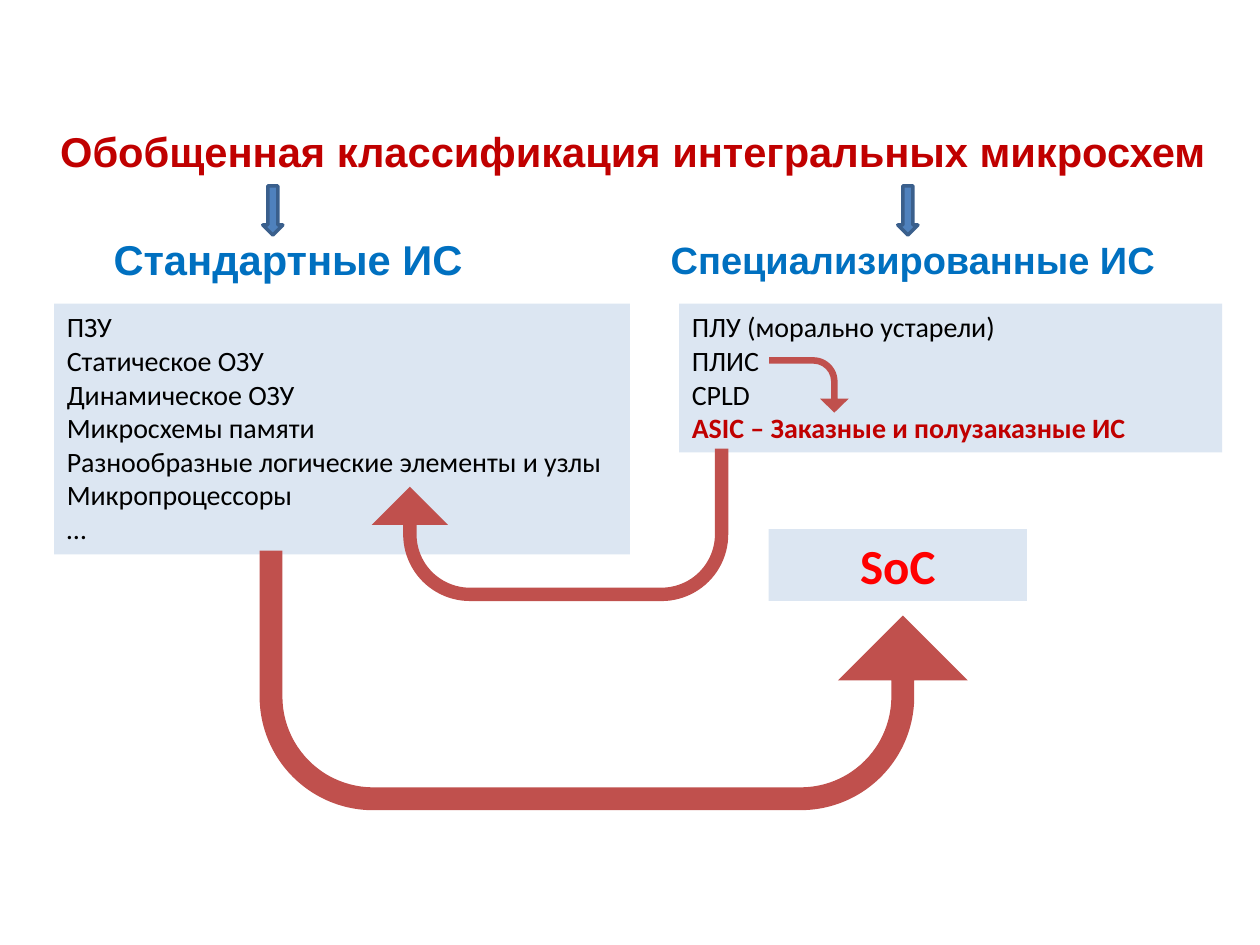
from lxml import etree
from pptx import Presentation
from pptx.dml.color import RGBColor
from pptx.enum.shapes import MSO_SHAPE
from pptx.enum.text import MSO_ANCHOR, MSO_AUTO_SIZE, PP_ALIGN
from pptx.oxml.ns import qn
from pptx.util import Inches, Pt

RECT, ARROW = MSO_SHAPE.RECTANGLE, MSO_SHAPE.RIGHT_ARROW
BENT, UTURN = MSO_SHAPE.BENT_ARROW, MSO_SHAPE.U_TURN_ARROW
LEFT, CENTER = PP_ALIGN.LEFT, PP_ALIGN.CENTER
TOP, MIDDLE = MSO_ANCHOR.TOP, MSO_ANCHOR.MIDDLE
COMPARE = 4  # layout with a title, two headings and two lists
PALE, BLUE, DARK = "DCE6F2", "0070C0", "C00000"
BEND = [0.088, 0.25, 0.25, 0.438, 0.75]

MEMORY = ["ПЗУ", "Статическое ОЗУ", "Динамическое ОЗУ", "Микросхемы памяти",
          "Разнообразные логические элементы и узлы", "Микропроцессоры", "…"]
CUSTOM = ["ПЛУ (морально устарели)", "ПЛИС", "СPLD",
          "ASIC – Заказные и полузаказные ИС"]


def paint(item, color):
    item.fill.solid()
    item.fill.fore_color.rgb = RGBColor.from_string(color)


def place(shape, box):
    shape.left, shape.top, shape.width, shape.height = map(Inches, box)


def style(par, size, name, color, bold=False, align=LEFT):
    """Format a paragraph without bullet, indent or spacing."""
    par.alignment = align
    par.space_before = par.space_after = Pt(0)
    par.line_spacing = 1.0
    props = par._p.get_or_add_pPr()
    props.set("marL", "0")
    props.set("indent", "0")
    etree.SubElement(props, qn("a:buNone"))
    font = par.font
    font.size, font.name, font.bold = Pt(size), name, bold
    font.color.rgb = RGBColor.from_string(color)


def write(shape, lines, anchor):
    frame = shape.text_frame
    frame.text = "\n".join(lines)
    frame.word_wrap = True
    frame.auto_size = MSO_AUTO_SIZE.NONE
    frame.vertical_anchor = anchor
    return frame.paragraphs


def add_head(shape, box, text, size, color):
    place(shape, box)
    style(write(shape, [text], MIDDLE)[0], size, "Arial", color, True, CENTER)


def add_list(shape, box, lines, key=None):
    """Fill a pale list; the line equal to key is stressed."""
    place(shape, box)
    paint(shape, PALE)
    for par in write(shape, lines, TOP):
        hot = par.text == key
        style(par, 16, "Calibri", DARK if hot else "000000", hot)


def add_form(slide, kind, box, color, turn=0, adjust=()):
    shape = slide.shapes.add_shape(kind, *map(Inches, box))
    shape.shadow.inherit = False
    shape.rotation = turn
    paint(shape, color)
    shape.line.fill.background()
    for i, value in enumerate(adjust):
        shape.adjustments[i] = value
    return shape


def add_down(slide, left):
    shape = add_form(slide, ARROW, (left, 1.59, 0.39, 0.16), "4F81BD", 90)
    paint(shape.line, "3A5F8C")
    shape.line.width = Pt(2)


def add_bend(slide, kind, box, turn, adjust, flip=False):
    shape = add_form(slide, kind, box, "C0504D", turn, adjust)
    if flip:
        shape._element.spPr.xfrm.set("flipH", "1")


def main():
    deck = Presentation()
    deck.slide_width, deck.slide_height = Inches(10), Inches(7.5)
    slide = deck.slides.add_slide(deck.slide_layouts[COMPARE])
    title, left, stock, right, special = slide.placeholders

    add_head(title, (0.27, 0.84, 9.5, 0.71),
             "Обобщенная классификация интегральных микросхем", 23.8, DARK)
    add_head(left, (0.67, 1.7, 3.23, 0.71), "Стандартные ИС", 23.8, BLUE)
    add_head(right, (5.16, 1.7, 4.17, 0.71),
             "Специализированные ИС", 21.7, BLUE)
    for x in (1.97, 7.01):
        add_down(slide, x)

    add_list(stock, (0.43, 2.41, 4.57, 1.99), MEMORY)
    add_list(special, (5.39, 2.41, 4.31, 1.18), CUSTOM, CUSTOM[-1])

    add_bend(slide, UTURN, (2.95, 3.56, 2.83, 1.21), 180, BEND)
    add_bend(slide, BENT, (6.2, 2.74, 0.44, 0.63), 90,
             [0.118, 0.258, 0.25, 0.438])
    add_bend(slide, UTURN, (2.06, 4.37, 5.62, 2.06), 180, BEND, flip=True)

    chip = add_form(slide, RECT, (6.1, 4.2, 2.05, 0.57), PALE)
    style(write(chip, ["SoC"], TOP)[0], 28, "Calibri", "FF0000", True, CENTER)
    deck.save("out.pptx")


if __name__ == "__main__":
    main()
